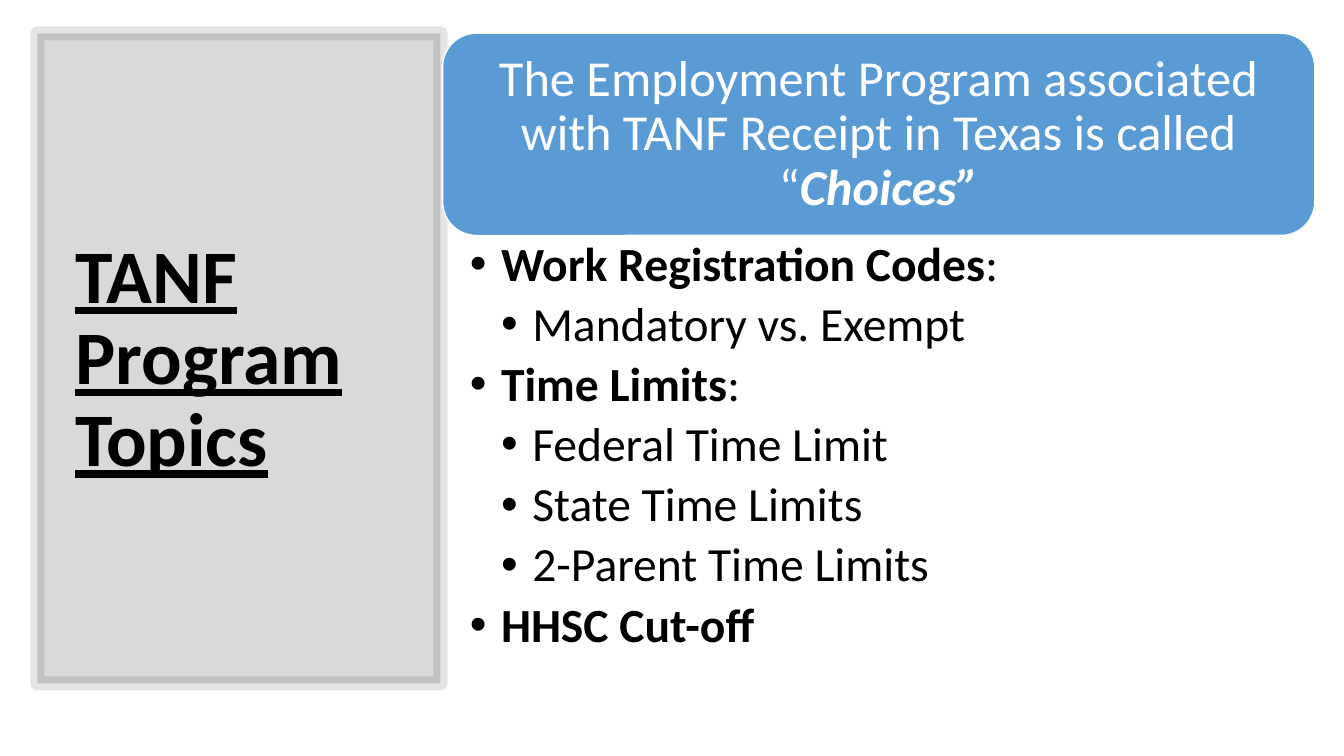
from lxml.etree import SubElement as Sub
from pptx import Presentation
from pptx.dml.color import RGBColor as RGB
from pptx.enum.shapes import MSO_SHAPE as Kind
from pptx.enum.text import MSO_ANCHOR as Anchor, PP_ALIGN as Align
from pptx.oxml.ns import qn
from pptx.util import Inches, Pt

deck = Presentation()
deck.slide_width, deck.slide_height = Inches(13.33), Inches(7.5)
slide = deck.slides.add_slide(deck.slide_layouts[6])
shapes = slide.shapes


def area(left, top, width, height):
    wide, high = deck.slide_width / 100, deck.slide_height / 100
    return [int(n) for n in (left * wide, top * high, width * wide, height * high)]


def paint(fill, tone, alpha=100):
    fill.solid()
    fill.fore_color.rgb = RGB.from_string(tone)
    if alpha < 100:
        color = fill._xPr.find(qn("a:solidFill"))[0]
        Sub(color, qn("a:alpha"), val=str(alpha * 1000))


left, top, wide, split = 32.93, 4.4, 64.89, 31.15
panel = shapes.add_shape(Kind.RECTANGLE, *area(2.78, top, 30, 86))
banner = shapes.add_shape(Kind.ROUNDED_RECTANGLE, *area(left, top, wide, split - top))
title = shapes.add_textbox(*area(4.88, 9.33, 25.96, 76.67))
topics = shapes.add_textbox(*area(left, split, wide, 59.07))

for shape, fill, shade, line, tint, width in [
    (panel, "000000", 15, "000000", 10, 10),
    (banner, "5B9BD5", 100, "FFFFFF", 100, 1),
]:
    shape.shadow.inherit = False
    paint(shape.fill, fill, shade)
    paint(shape.line.fill, line, tint)
    shape.line.width = Pt(width)

bold = {"bold": True}
heads = [
    (0, [("TANF Program\vTopics", {"bold": True, "underline": True})]),
]
call = [
    (0, [
        ("The Employment Program associated with TANF Receipt in Texas is called “", {}),
        ("Choices”", {"bold": True, "italic": True}),
    ]),
]
items = [
    (1, [("Work Registration Codes", bold), (":", {})]),
    (2, [("Mandatory vs. Exempt", {})]),
    (1, [("Time Limits", bold), (":", {})]),
    (2, [("Federal Time Limit", {})]),
    (2, [("State Time Limits", {})]),
    (2, [("2-Parent Time Limits", {})]),
    (1, [("HHSC Cut-off", bold)]),
]

for shape, paras, size, tone, align, anchor, sides, ends, gap in [
    (title, heads, 54, "000000", Align.LEFT, Anchor.MIDDLE, 0.1, 0.05, 0),
    (banner, call, 36, "FFFFFF", Align.CENTER, Anchor.MIDDLE, 0.15, 0.15, 0),
    (topics, items, 34, "000000", Align.LEFT, Anchor.TOP, 0.27, 0.05, 6.2),
]:
    frame = shape.text_frame
    frame.word_wrap = True
    frame.vertical_anchor = anchor
    frame.margin_left = frame.margin_right = Inches(sides)
    frame.margin_top = frame.margin_bottom = Inches(ends)
    for row, (level, parts) in enumerate(paras):
        para = frame.add_paragraph() if row else frame.paragraphs[0]
        para.alignment = align
        para.line_spacing = 0.9
        para.space_after = Pt(gap)
        if level:
            para.level = level - 1
            props = para._p.get_or_add_pPr()
            props.set("marL", str(Inches(0.31 * level)))
            props.set("indent", str(Inches(-0.31)))
            Sub(props, qn("a:buFont"), typeface="Arial")
            Sub(props, qn("a:buChar"), char="•")
        for words, style in parts:
            for turn, piece in enumerate(words.split("\v")):
                if turn:
                    para.add_line_break()
                run = para.add_run()
                run.text = piece
                font = run.font
                font.color.rgb = RGB.from_string(tone)
                for name, value in {"name": "Calibri", "size": Pt(size), **style}.items():
                    setattr(font, name, value)

deck.save("out.pptx")
